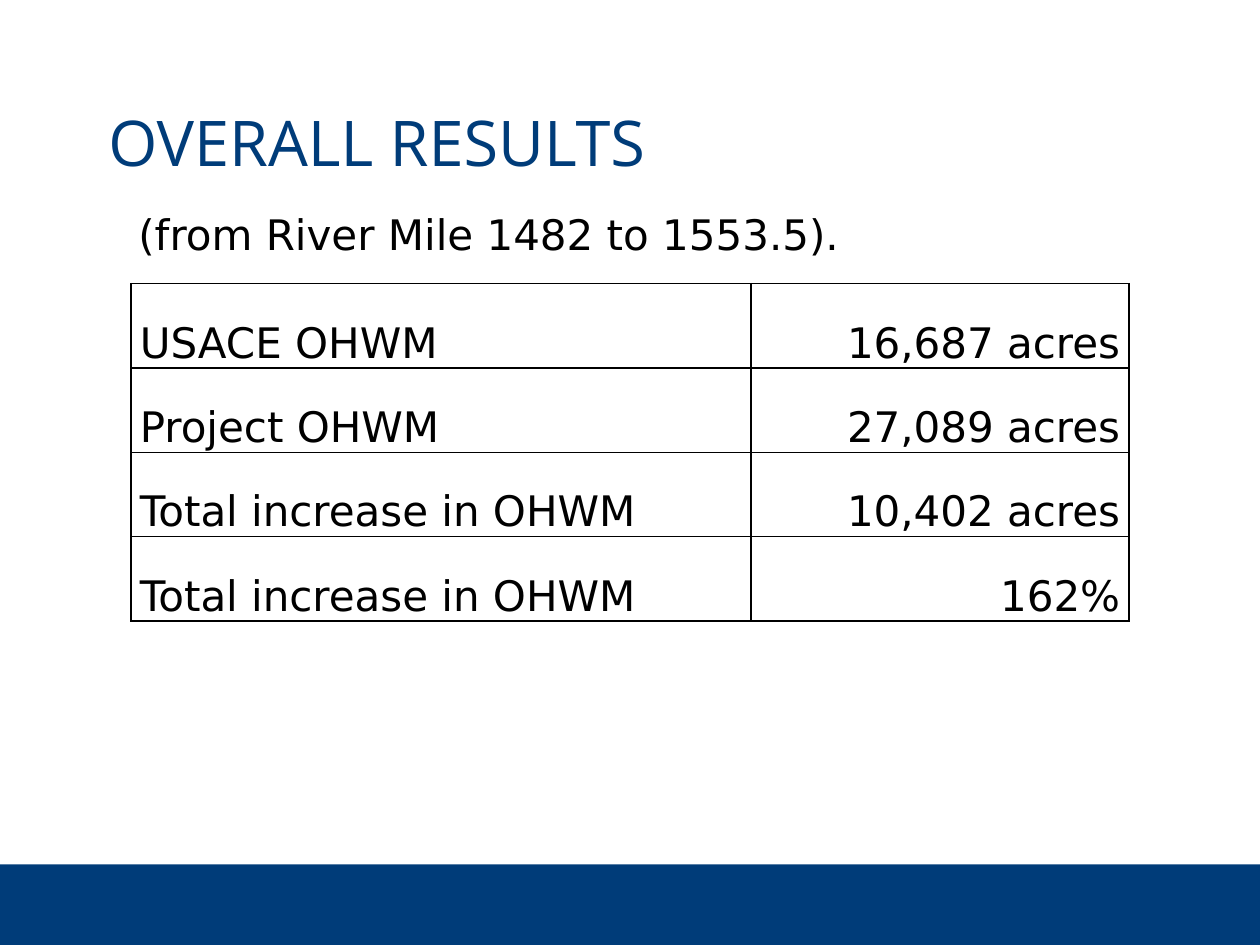
from lxml.etree import SubElement
from pptx import Presentation
from pptx.dml.color import RGBColor
from pptx.enum.shapes import MSO_SHAPE as Shape
from pptx.enum.text import MSO_ANCHOR as Anchor, MSO_AUTO_SIZE as AutoSize, PP_ALIGN as Align
from pptx.oxml.ns import qn
from pptx.util import Inches, Pt

COLORS = {"navy": "003C79", "black": "000000", "white": "FFFFFF"}
TITLE_FONT = "Open Sans"
BODY_FONT = "DejaVu Sans"
RESULTS = [
    ("USACE OHWM", "16,687 acres"),
    ("Project OHWM", "27,089 acres"),
    ("Total increase in OHWM", "10,402 acres"),
    ("Total increase in OHWM", "162%"),
]
COLUMN_WIDTHS = (4.92, 3)
ROW_HEIGHT = 0.67


def color(name):
    return RGBColor.from_string(COLORS[name])


def write(frame, text, font=BODY_FONT, size=24, ink="black", align=Align.LEFT, spacing=1.07):
    frame.word_wrap = True
    paragraph = frame.paragraphs[0]
    paragraph.alignment = align
    paragraph.line_spacing = spacing
    run = paragraph.add_run()
    run.text = text
    run.font.name = font
    run.font.size = Pt(size)
    run.font.color.rgb = color(ink)


def add_footer_band(slide):
    band = slide.shapes.add_shape(Shape.RECTANGLE, Inches(0), Inches(6.86), Inches(10), Inches(0.64))
    band.shadow.inherit = False
    band.fill.solid()
    band.fill.fore_color.rgb = color("navy")
    band.line.fill.background()


def add_title(slide, text):
    title = slide.shapes.title
    title.left, title.top = Inches(0.76), Inches(0.66)
    title.width, title.height = Inches(8.6), Inches(1)
    title.text_frame.vertical_anchor = Anchor.MIDDLE
    write(title.text_frame, text, TITLE_FONT, 36, "navy", spacing=0.9)


def add_river_range(slide, text):
    river_range = slide.shapes.add_textbox(Inches(1), Inches(1.58), Inches(7.17), Inches(0.51))
    write(river_range.text_frame, text)
    river_range.text_frame.auto_size = AutoSize.SHAPE_TO_FIT_TEXT


def add_borders(cell):
    properties = cell._tc.get_or_add_tcPr()
    for side in ("a:lnL", "a:lnR", "a:lnT", "a:lnB"):
        border = SubElement(properties, qn(side), w=str(Pt(1)))
        fill = SubElement(border, qn("a:solidFill"))
        SubElement(fill, qn("a:srgbClr"), val=COLORS["black"])


def format_cell(cell, text, align):
    cell.margin_left = cell.margin_right = Inches(0.07)
    cell.margin_top = cell.margin_bottom = 0
    cell.vertical_anchor = Anchor.BOTTOM
    add_borders(cell)
    cell.fill.background()
    write(cell.text_frame, text, align=align)


def add_results_table(slide):
    table = slide.shapes.add_table(
        len(RESULTS), len(COLUMN_WIDTHS), Inches(1.04), Inches(2.25),
        Inches(sum(COLUMN_WIDTHS)), Inches(ROW_HEIGHT * len(RESULTS)),
    ).table
    table.first_row = False
    table.horz_banding = False
    for column, width in zip(table.columns, COLUMN_WIDTHS):
        column.width = Inches(width)
    for row, (measure, amount) in zip(table.rows, RESULTS):
        row.height = Inches(ROW_HEIGHT)
        format_cell(row.cells[0], measure, Align.LEFT)
        format_cell(row.cells[1], amount, Align.RIGHT)


def main():
    deck = Presentation()
    deck.slide_width, deck.slide_height = Inches(10), Inches(7.5)
    slide = deck.slides.add_slide(deck.slide_layouts[5])
    slide.background.fill.solid()
    slide.background.fill.fore_color.rgb = color("white")
    add_footer_band(slide)
    add_title(slide, "OVERALL RESULTS")
    add_results_table(slide)
    add_river_range(slide, "(from River Mile 1482 to 1553.5).")
    deck.save("out.pptx")


if __name__ == "__main__":
    main()
